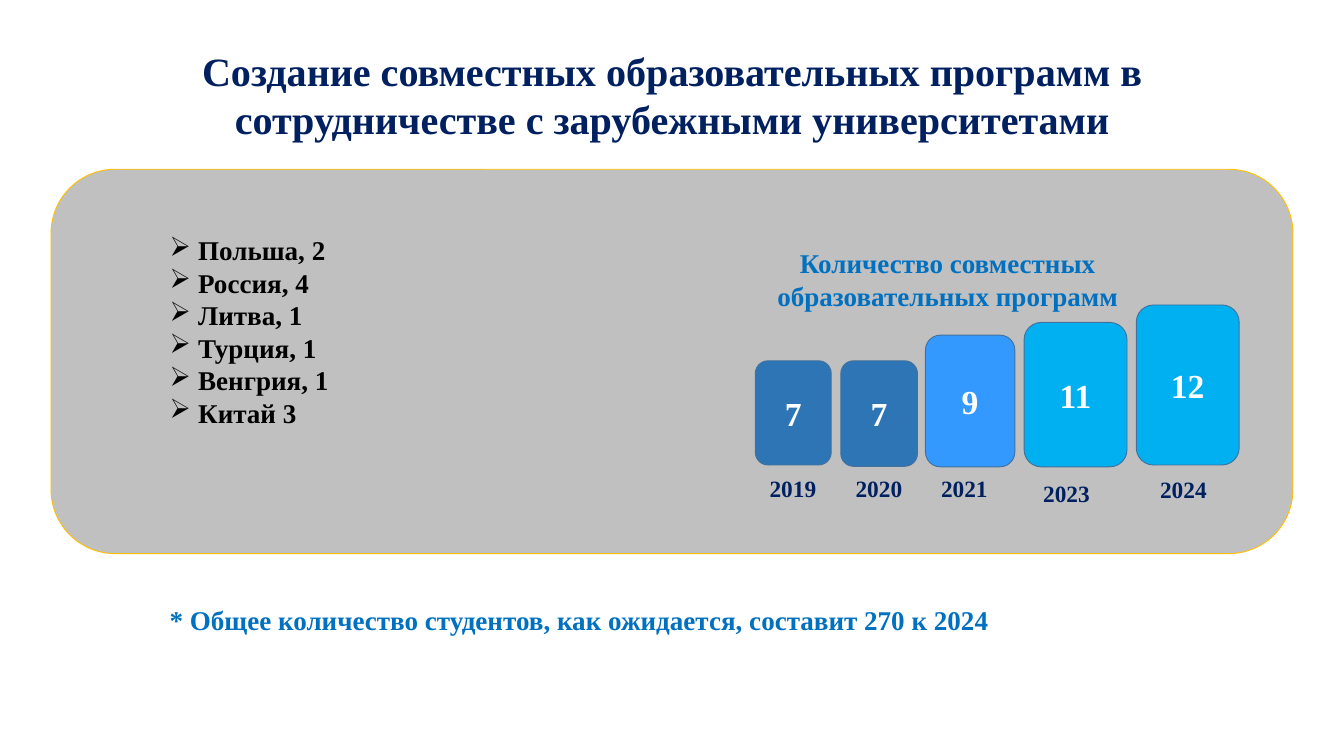
import pptx
import pptx.util
import pptx.dml.color
import pptx.enum.shapes
import pptx.enum.text
import lxml.etree
from dataclasses import dataclass

Cm = pptx.util.Cm
Shape = pptx.enum.shapes.MSO_SHAPE
Anchor = pptx.enum.text.MSO_ANCHOR
Align = pptx.enum.text.PP_ALIGN


@dataclass
class Theme:
    font: str = "Times New Roman"
    navy: str = "002060"
    blue: str = "0070C0"
    black: str = "000000"
    white: str = "FFFFFF"
    panel: str = "C0C0C0"
    gold: str = "FFC000"
    edge: str = "41719C"
    steel: str = "2E75B6"
    azure: str = "3399FF"
    sky: str = "00B0F0"
    title: int = 43
    value: int = 36
    body: int = 29
    year: int = 25


theme = Theme()
rgb = pptx.dml.color.RGBColor.from_string


def write(shape, lines, size, color, align=Align.CENTER, anchor=Anchor.TOP, bullet=None):
    frame = shape.text_frame
    frame.word_wrap = True
    frame.auto_size = pptx.enum.text.MSO_AUTO_SIZE.NONE
    frame.vertical_anchor = anchor
    frame.margin_left = frame.margin_right = Cm(0.24)
    frame.margin_top = frame.margin_bottom = Cm(0.24)
    frame.text = "\n".join(lines)
    for para in frame.paragraphs:
        para.alignment = align
        if bullet:
            props = para._p.get_or_add_pPr()
            props.set("marL", str(Cm(1.08)))
            props.set("indent", str(-Cm(1.08)))
            mark = lxml.etree.SubElement(props, pptx.oxml.ns.qn("a:buChar"))
            mark.set("char", bullet)
        font = para.font
        font.name, font.size, font.bold = theme.font, pptx.util.Pt(size), True
        font.color.rgb = rgb(color)


def block(left, top, width, height, fill, line):
    shape = slide.shapes.add_shape(
        Shape.ROUNDED_RECTANGLE, Cm(left), Cm(top), Cm(width), Cm(height))
    shape.shadow.inherit = False
    shape.fill.solid()
    shape.fill.fore_color.rgb = rgb(fill)
    shape.line.color.rgb = rgb(line)
    shape.line.width = pptx.util.Pt(1)
    return shape


deck = pptx.Presentation()
deck.slide_width, deck.slide_height = Cm(50.8), Cm(28.58)
slide = deck.slides.add_slide(deck.slide_layouts[5])

# Title
title = slide.shapes.title
title.left, title.top, title.width, title.height = Cm(3.23), Cm(1.5), Cm(44.35), Cm(5.56)
write(title, ["Создание совместных образовательных программ в "
              "сотрудничестве с зарубежными университетами"], theme.title, theme.navy)

# Grey panel
block(1.93, 6.4, 46.94, 14.53, theme.panel, theme.gold)

# Countries
lands = slide.shapes.add_textbox(Cm(6.17), Cm(8.59), Cm(19.1), Cm(7.39))
write(lands, ["Польша, 2", "Россия, 4", "Литва, 1", "Турция, 1", "Венгрия, 1", "Китай 3"],
      theme.body, theme.black, Align.LEFT, bullet="➢")

# Heading above the bars
head = slide.shapes.add_textbox(Cm(26.44), Cm(9.09), Cm(18.77), Cm(2.74))
write(head, ["Количество совместных образовательных программ"], theme.body, theme.blue)

# Bars: year, value, left, top, width, height, fill, label left, label top
bars = [
    ("2019", "7", 28.55, 13.64, 2.87, 3.94, theme.steel, 28.6, 17.68),
    ("2020", "7", 31.78, 13.64, 2.9, 3.99, theme.steel, 31.85, 17.68),
    ("2021", "9", 34.98, 12.67, 3.38, 4.98, theme.azure, 35.08, 17.68),
    ("2023", "11", 38.71, 12.19, 3.89, 5.46, theme.sky, 38.94, 17.86),
    ("2024", "12", 42.95, 11.53, 3.89, 6.05, theme.sky, 43.36, 17.73),
]
for year, value, left, top, width, height, fill, x, y in bars:
    bar = block(left, top, width, height, fill, theme.edge)
    write(bar, [value], theme.value, theme.white, anchor=Anchor.MIDDLE)
    label = slide.shapes.add_textbox(Cm(x), Cm(y), Cm(2.74), Cm(1.4))
    write(label, [year], theme.year, theme.navy)

# Footnote
note = slide.shapes.add_textbox(Cm(6.17), Cm(22.56), Cm(41.96), Cm(1.57))
write(note, ["* Общее количество студентов, как ожидается, составит 270 к 2024"],
      theme.body, theme.blue, Align.LEFT)

deck.save("out.pptx")
